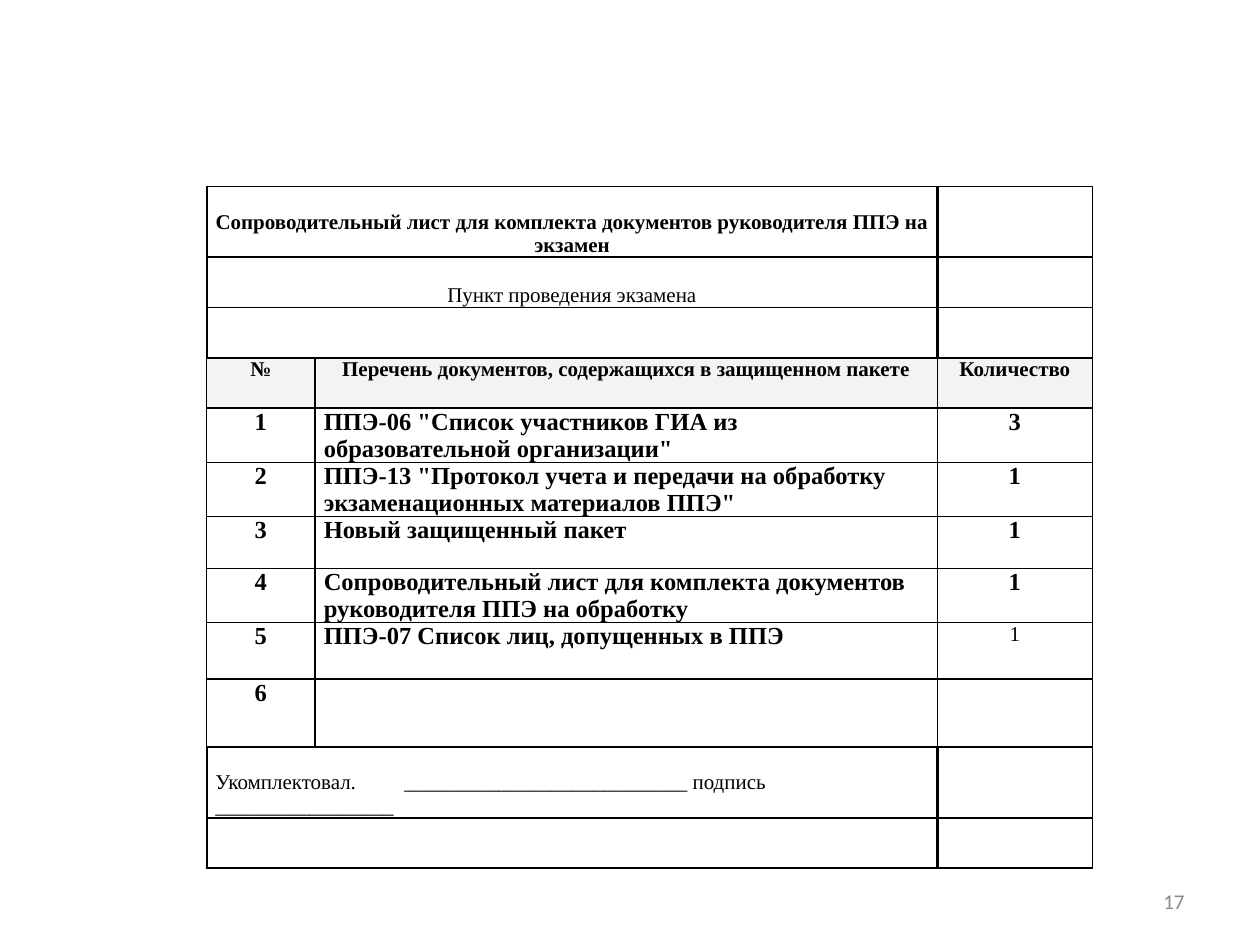
"""Build the accompanying-sheet slide: a bordered table and a page number."""
from typing import NamedTuple

from lxml import etree
from pptx import Presentation
from pptx.dml.color import RGBColor
from pptx.enum.text import MSO_ANCHOR, PP_ALIGN
from pptx.oxml.ns import qn
from pptx.util import Inches, Pt

LEFT, CENTER, RIGHT = PP_ALIGN.LEFT, PP_ALIGN.CENTER, PP_ALIGN.RIGHT
TOP, MIDDLE, BOTTOM = MSO_ANCHOR.TOP, MSO_ANCHOR.MIDDLE, MSO_ANCHOR.BOTTOM
BLACK = RGBColor(0x00, 0x00, 0x00)
GRAY = RGBColor(0x89, 0x89, 0x89)
HEADER_FILL = RGBColor(0xF3, 0xF3, 0xF3)
COLUMN_WIDTHS = (0.86, 4.94, 1.23)


class Row(NamedTuple):
    height: float
    texts: tuple[str, str, str]
    size: int = 14
    bold: bool = True
    count_size: int = 14
    count_bold: bool = True
    alignments: tuple = (CENTER, LEFT, CENTER)
    anchor: MSO_ANCHOR = TOP
    merged: bool = False
    header: bool = False


def banner(height: float, text: str = "", bold: bool = False,
           alignment: PP_ALIGN = CENTER) -> Row:
    return Row(height, (text, "", ""), 12, bold,
               alignments=(alignment, CENTER, CENTER), anchor=BOTTOM, merged=True)


ROWS = (
    banner(0.56, "Сопроводительный лист для комплекта документов руководителя ППЭ на экзамен",
           bold=True),
    banner(0.4, "Пункт проведения экзамена"),
    banner(0.4),
    Row(0.4, ("№", "Перечень документов, содержащихся в защищенном пакете", "Количество"),
        12, count_size=12, alignments=(CENTER,) * 3, header=True),
    Row(0.43, ("1", 'ППЭ-06 "Список участников ГИА из образовательной организации"', "3")),
    Row(0.43, ("2", 'ППЭ-13 "Протокол учета и передачи на обработку экзаменационных '
                    'материалов ППЭ"', "1")),
    Row(0.41, ("3", "Новый защищенный пакет", "1")),
    Row(0.43, ("4", "Сопроводительный лист для комплекта документов руководителя ППЭ "
                    "на обработку", "1")),
    Row(0.45, ("5", "ППЭ-07 Список лиц, допущенных в ППЭ", "1"),
        count_size=12, count_bold=False),
    Row(0.54, ("6", "", "")),
    banner(0.56, "Укомплектовал. \t___________________________ подпись _________________",
           alignment=LEFT),
    banner(0.4),
)


def write_text(text_frame, text: str, *, size: int, bold: bool = False,
               alignment: PP_ALIGN = LEFT, font_name: str = "Times New Roman",
               color: RGBColor = BLACK) -> None:
    paragraph = text_frame.paragraphs[0]
    paragraph.alignment = alignment
    run = paragraph.add_run()
    run.text = text
    run.font.size = Pt(size)
    run.font.bold = bold
    run.font.name = font_name
    run.font.color.rgb = color


def set_borders(cell, left_width: float) -> None:
    properties = cell._tc.get_or_add_tcPr()
    widths = {"a:lnL": left_width, "a:lnR": 1, "a:lnT": 1, "a:lnB": 1}
    for tag, width in widths.items():
        line = etree.SubElement(properties, qn(tag), w=str(Pt(width)))
        fill = etree.SubElement(line, qn("a:solidFill"))
        etree.SubElement(fill, qn("a:srgbClr"), val=str(BLACK))


def draw_row(table, index: int, row: Row) -> None:
    table.rows[index].height = Inches(row.height)
    if row.merged:
        table.cell(index, 0).merge(table.cell(index, 1))
    for column, text in enumerate(row.texts):
        cell = table.cell(index, column)
        set_borders(cell, 1.5 if row.merged else 1)
        if row.header:
            cell.fill.solid()
            cell.fill.fore_color.rgb = HEADER_FILL
        else:
            cell.fill.background()
        cell.margin_left = cell.margin_right = Inches(0.07)
        cell.margin_top = cell.margin_bottom = Inches(0)
        cell.vertical_anchor = row.anchor
        if text:
            is_count = column == 2
            write_text(cell.text_frame, text,
                       size=row.count_size if is_count else row.size,
                       bold=row.count_bold if is_count else row.bold,
                       alignment=row.alignments[column])


def draw_table(slide) -> None:
    table = slide.shapes.add_table(
        len(ROWS), len(COLUMN_WIDTHS), Inches(1.64), Inches(1.48),
        Inches(sum(COLUMN_WIDTHS)), Inches(sum(row.height for row in ROWS))).table
    table.first_row = table.horz_banding = False
    for column, width in zip(table.columns, COLUMN_WIDTHS):
        column.width = Inches(width)
    for index, row in enumerate(ROWS):
        draw_row(table, index, row)


def draw_page_number(slide) -> None:
    text_frame = slide.shapes.add_textbox(
        Inches(7.17), Inches(6.95), Inches(2.33), Inches(0.4)).text_frame
    text_frame.word_wrap = True
    text_frame.vertical_anchor = MIDDLE
    write_text(text_frame, "17", size=12, alignment=RIGHT, font_name="Calibri", color=GRAY)


def main() -> None:
    presentation = Presentation()
    presentation.slide_width, presentation.slide_height = Inches(10), Inches(7.5)
    slide = presentation.slides.add_slide(presentation.slide_layouts[6])
    draw_table(slide)
    draw_page_number(slide)
    presentation.save("out.pptx")


if __name__ == "__main__":
    main()
